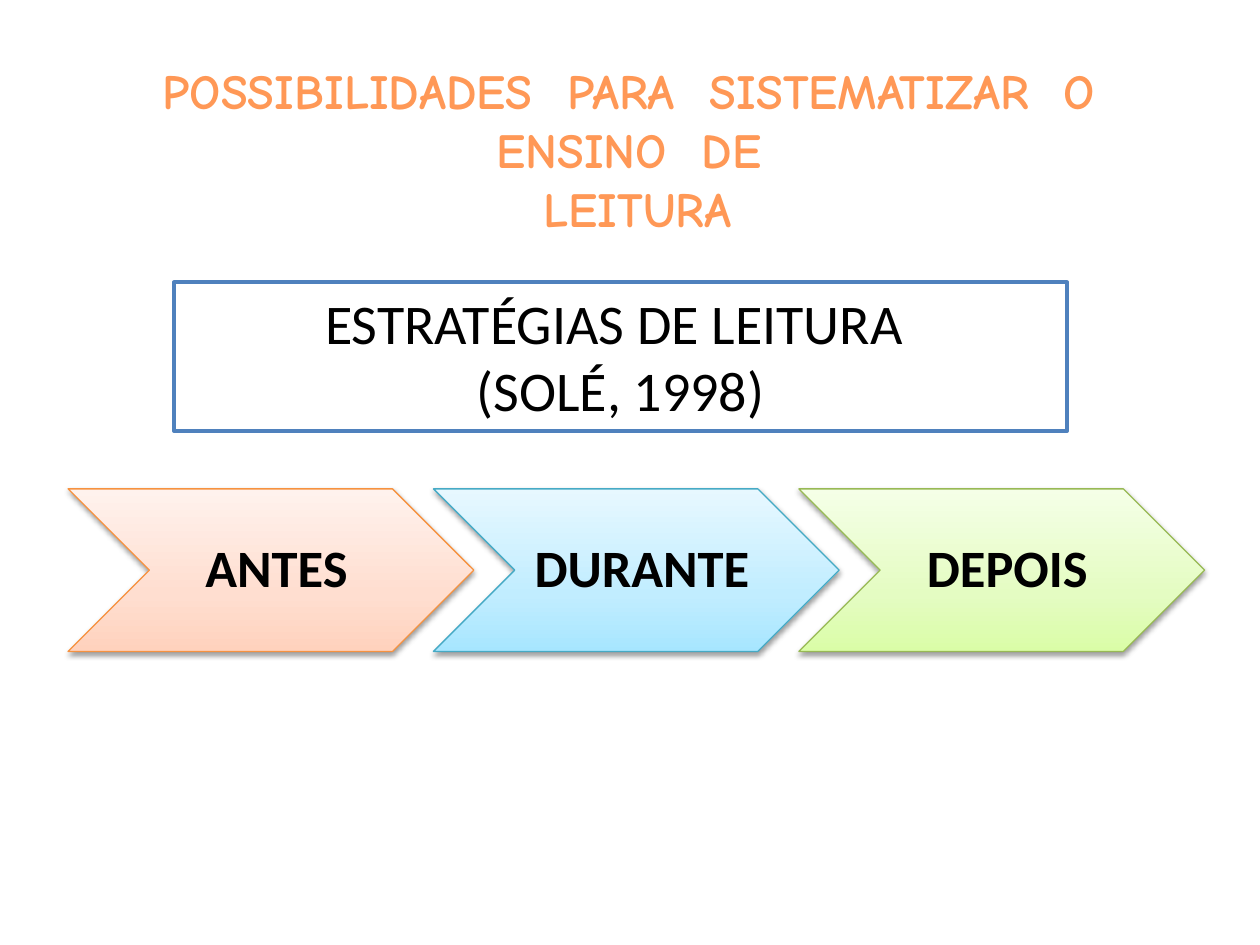
from lxml import etree
from pptx import Presentation
from pptx.dml.color import RGBColor as RGB
from pptx.enum.shapes import MSO_SHAPE as Shape
from pptx.enum.text import MSO_ANCHOR as Anchor, PP_ALIGN as Align
from pptx.oxml import parse_xml
from pptx.oxml.ns import nsdecls
from pptx.util import Inches, Pt

BLACK = RGB(0x00, 0x00, 0x00)
WHITE = RGB(0xFF, 0xFF, 0xFF)
BLUE = RGB(0x4F, 0x81, 0xBD)
ORANGE = RGB(0xFF, 0x98, 0x56)

# Label, outline, then gradient colours from bottom to top
STEPS = [
    ("ANTES", RGB(0xF6, 0x92, 0x40),
     [RGB(0xFF, 0xD2, 0xBD), RGB(0xFF, 0xDE, 0xD0), RGB(0xFF, 0xF2, 0xED)]),
    ("DURANTE", RGB(0x46, 0xAA, 0xC5),
     [RGB(0xA7, 0xE6, 0xFF), RGB(0xC1, 0xED, 0xFF), RGB(0xE7, 0xF8, 0xFF)]),
    ("DEPOIS", RGB(0x98, 0xB9, 0x55),
     [RGB(0xDA, 0xFD, 0xA7), RGB(0xE4, 0xFC, 0xC2), RGB(0xF5, 0xFF, 0xE7)]),
]
STOPS = [0, 35, 100]
SHADOW = f"""<a:effectLst {nsdecls("a")}>
  <a:outerShdw blurRad="{Pt(3.1)}" dist="{Pt(1.6)}" dir="5400000" rotWithShape="0">
    <a:srgbClr val="000000"><a:alpha val="38000"/></a:srgbClr>
  </a:outerShdw>
</a:effectLst>"""


def write(shape, lines, color, **font):
    """Fill the shape with centred paragraphs in one format."""
    frame = shape.text_frame
    frame.word_wrap = True
    for i, line in enumerate(lines):
        para = frame.paragraphs[0] if i == 0 else frame.add_paragraph()
        para.alignment = Align.CENTER
        run = para.add_run()
        run.text = line
        run.font.color.rgb = color
        for name, value in font.items():
            setattr(run.font, name, value)
    return frame


def shade(shape, colors):
    """Give the shape a three-stop upward gradient and a soft shadow."""
    shape.fill.gradient()
    shape.fill.gradient_angle = 90
    props = shape._element.spPr
    stops = props.find(".//{*}gsLst")
    for stop in list(stops):
        stops.remove(stop)
    for pos, color in zip(STOPS, colors):
        stops.append(parse_xml(
            f'<a:gs {nsdecls("a")} pos="{pos * 1000}"><a:srgbClr val="{color}"/></a:gs>'))
    shape.shadow.inherit = False
    props.replace(props.find("{*}effectLst"), etree.fromstring(SHADOW))


prs = Presentation()
prs.slide_width, prs.slide_height = Inches(10), Inches(7.5)
slide = prs.slides.add_slide(prs.slide_layouts[6])
shapes = slide.shapes

# Reading stages
for i, (label, edge, colors) in enumerate(STEPS):
    step = shapes.add_shape(Shape.CHEVRON, Inches(0.54 + 2.9 * i), Inches(3.88),
                            Inches(3.22), Inches(1.29))
    step.line.color.rgb = edge
    step.line.width = Pt(0.75)
    shade(step, colors)
    frame = write(step, [label], BLACK, name="Calibri", size=Pt(30), bold=True)
    frame.paragraphs[0].line_spacing = 0.9
    insets = {"margin_left": 0.13, "margin_top": 0.04,
              "margin_right": 0.04, "margin_bottom": 0.04}
    for name, value in insets.items():
        setattr(frame, name, Inches(value))
    frame.vertical_anchor = Anchor.MIDDLE

# Framed subject
box = shapes.add_shape(Shape.RECTANGLE, Inches(1.38), Inches(2.24),
                       Inches(7.09), Inches(1.18))
box.shadow.inherit = False
box.fill.solid()
box.fill.fore_color.rgb = WHITE
box.line.color.rgb = BLUE
box.line.width = Pt(2)
frame = write(box, ["ESTRATÉGIAS DE LEITURA ", "(SOLÉ, 1998)"], BLACK,
              name="Calibri", size=Pt(32))
frame.vertical_anchor = Anchor.TOP

# Title
title = shapes.add_textbox(Inches(0.67), Inches(0.43), Inches(8.78), Inches(1.51))
write(title, ["POSSIBILIDADES  PARA  SISTEMATIZAR  O  ENSINO  DE ", "LEITURA"],
      ORANGE, name="Comic Neue", size=Pt(28), bold=True)

prs.save("out.pptx")
